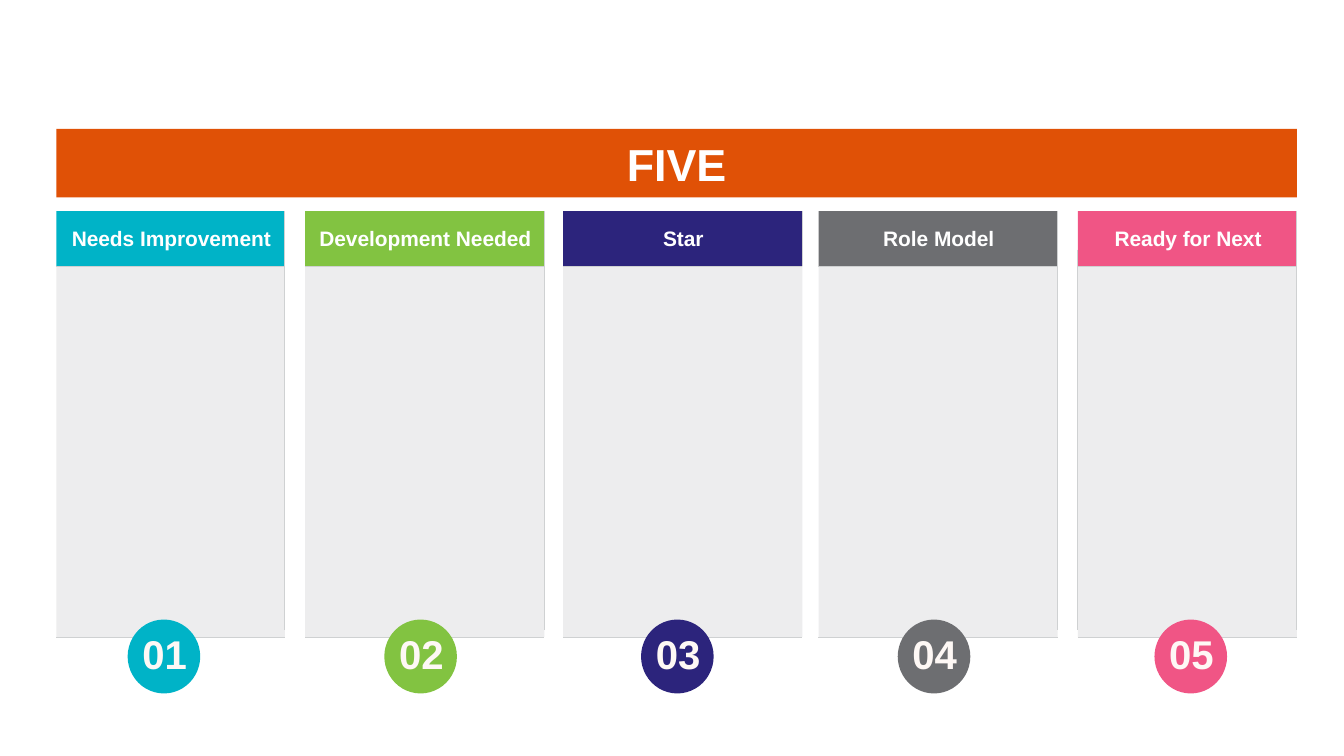
from pptx import Presentation
from pptx.util import Inches, Pt
from pptx.dml.color import RGBColor
from pptx.enum.shapes import MSO_SHAPE as Shape, MSO_CONNECTOR as Link
from pptx.enum.text import PP_ALIGN as Align, MSO_ANCHOR as Anchor
from pptx.oxml.ns import qn
from lxml.etree import SubElement

WIDE = 10
HIGH = WIDE * 9 / 16
LEFT, SPAN = 0.42, 9.23
HEAD, BODY = 0.41, 2.76
DOT_W, DOT_H = 0.54, 0.55
DOT_X, DOT_STEP = 0.95, 1.91
GREY, RULE = "EDEDEE", "CFD1D2"
FONTS = {
    "title": {"size": Pt(24), "color": "FFFFFF"},
    "label": {"size": Pt(11.2), "color": "FFFFFF"},
    "number": {"size": Pt(21.5), "color": "FEF8F5"},
}
# label, colour, left, width, share of the body with a right rule, left rule
COLUMNS = [
    ("Needs Improvement", "00B3C7", 0.42, 1.7, 0.98, False),
    ("Development Needed", "82C341", 2.27, 1.78, 0.98, False),
    ("Star", "2C247C", 4.19, 1.78, 0, False),
    ("Role Model", "6D6E71", 6.09, 1.78, 0.98, False),
    ("Ready for Next", "F05585", 8.02, 1.63, 0.98, True),
]


def paint(color):
    return RGBColor.from_string(color)


def block(slide, kind, box, fill):
    shape = slide.shapes.add_shape(kind, *map(Inches, box))
    shape.shadow.inherit = False
    shape.fill.solid()
    shape.fill.fore_color.rgb = paint(fill)
    shape.line.fill.background()
    return shape


def write(shape, text, style):
    frame = shape.text_frame
    for side in ("left", "right", "top", "bottom"):
        setattr(frame, f"margin_{side}", 0)
    frame.word_wrap = True
    frame.vertical_anchor = Anchor.MIDDLE
    para = frame.paragraphs[0]
    para.alignment = Align.CENTER
    run = para.add_run()
    run.text = text
    look = {"name": "Arial", "bold": True, "size": style["size"]}
    for name, value in look.items():
        setattr(run.font, name, value)
    run.font.color.rgb = paint(style["color"])


def note(slide, box, text, style):
    write(slide.shapes.add_textbox(*map(Inches, box)), text, FONTS[style])


def rule(slide, *ends):
    line = slide.shapes.add_connector(Link.STRAIGHT, *map(Inches, ends))
    line.line.color.rgb = paint(RULE)
    line.line.width = Pt(0.5)
    SubElement(line._element.spPr, qn("a:effectLst"))


def column(slide, box, label, color, share, edge):
    """Draw a coloured head over a grey body, with thin rules."""
    x, y, w, h = box
    mid, right, foot = y + HEAD, x + w, y + h
    block(slide, Shape.RECTANGLE, (x, y, w, HEAD), color)
    block(slide, Shape.RECTANGLE, (x, mid, w, BODY), GREY)
    rule(slide, x, mid, right, mid)
    rule(slide, x, foot, right, foot)
    rule(slide, right, y, right, mid)
    if share:
        rule(slide, right, y + 0.7 * HEAD, right, mid + share * BODY)
    if edge:
        rule(slide, x, y + 0.7 * HEAD, x, mid + share * BODY)
    note(slide, (x + 0.03, y + 0.1, w - 0.05, HEAD / 2), label, "label")


def dot(slide, box, number, color):
    x, y, w, h = box
    block(slide, Shape.OVAL, box, color)
    note(slide, (x + 0.1, y + 0.07, 0.35, 0.37), number, "number")


def main():
    deck = Presentation()
    deck.slide_width, deck.slide_height = Inches(WIDE), Inches(HIGH)
    slide = deck.slides.add_slide(deck.slide_layouts[6])

    for label, color, x, w, share, edge in COLUMNS:
        box = (x, 1.57, w, HEAD + BODY)
        column(slide, box, label, color, share, edge)
    for i, (_, color, *_) in enumerate(COLUMNS):
        box = (DOT_X + i * DOT_STEP, 4.61, DOT_W, DOT_H)
        dot(slide, box, f"{i + 1:02}", color)
    banner = block(slide, Shape.RECTANGLE, (LEFT, 0.96, SPAN, 0.51), "E05106")
    write(banner, "FIVE", FONTS["title"])
    deck.save("out.pptx")


if __name__ == "__main__":
    main()
